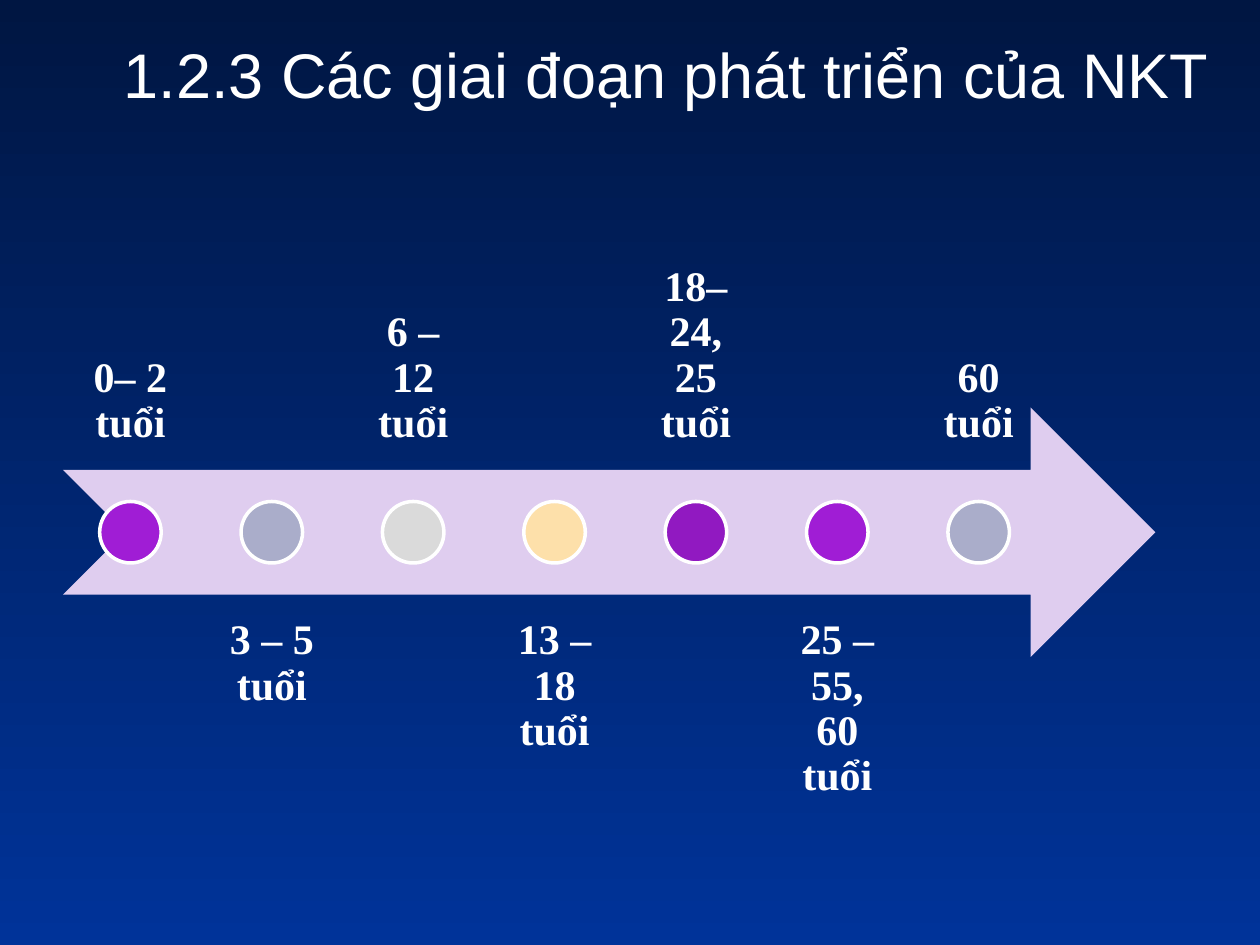
"""Build a timeline slide of seven age stages along a notched arrow."""
from pptx import Presentation
from pptx.dml.color import RGBColor
from pptx.enum.shapes import MSO_SHAPE
from pptx.enum.text import MSO_ANCHOR, PP_ALIGN
from pptx.util import Cm, Pt

ARROW = MSO_SHAPE.NOTCHED_RIGHT_ARROW
OVAL = MSO_SHAPE.OVAL
TOP, MIDDLE, BOTTOM = MSO_ANCHOR.TOP, MSO_ANCHOR.MIDDLE, MSO_ANCHOR.BOTTOM
CENTER = PP_ALIGN.CENTER

STAGES = [
    ("0– 2 tuổi", "A01DD5"),
    ("3 – 5 tuổi", "AAADCA"),
    ("6 – 12 tuổi", "DADADA"),
    ("13 – 18 tuổi", "FDE0AA"),
    ("18– 24, 25 tuổi", "9119C1"),
    ("25 – 55, 60 tuổi", "A01DD5"),
    ("60 tuổi", "AAADCA"),
]
LEFT, UPPER, LOWER = 1.27, 4.45, 11.99
WIDTH, HEIGHT, STEP = 2.72, 5.03, 2.85
DOT = 1.24
AXIS = 10.73


def color(code):
    return RGBColor.from_string(code)


class Deck:
    white = "FFFFFF"
    head_font = "Arial"
    body_font = "Times New Roman"

    def __init__(self, slide):
        self.slide = slide
        self.group = slide.shapes.add_group_shape()

    def backdrop(self, start, end):
        fill = self.slide.background.fill
        fill.gradient()
        fill.gradient_angle = 270
        for stop, code in zip(fill.gradient_stops, (start, end)):
            stop.color.rgb = color(code)

    def put_text(self, frame, text, font, size, bold, anchor):
        frame.word_wrap = True
        frame.vertical_anchor = anchor
        para = frame.paragraphs[0]
        para.alignment = CENTER
        run = para.add_run()
        run.text = text
        run.font.name = font
        run.font.size = Pt(size)
        run.font.bold = bold
        run.font.color.rgb = color(self.white)
        return para

    def title(self, text, x, y, w, h):
        box = self.slide.shapes.title
        box.left, box.top, box.width, box.height = Cm(x), Cm(y), Cm(w), Cm(h)
        self.put_text(box.text_frame, text, self.head_font, 36, False, MIDDLE)

    def shape(self, kind, x, y, w, h, fill, line=None):
        item = self.group.shapes.add_shape(kind, Cm(x), Cm(y), Cm(w), Cm(h))
        item.shadow.inherit = False
        item.fill.solid()
        item.fill.fore_color.rgb = color(fill)
        if line:
            item.line.color.rgb = color(line)
            item.line.width = Pt(2)
        else:
            item.line.fill.background()

    def label(self, text, x, y, w, h, anchor):
        box = self.group.shapes.add_textbox(Cm(x), Cm(y), Cm(w), Cm(h))
        frame = box.text_frame
        frame.margin_left = frame.margin_right = Cm(0.48)
        frame.margin_top = frame.margin_bottom = Cm(0.48)
        para = self.put_text(frame, text, self.body_font, 24, True, anchor)
        para.line_spacing = 0.9


def main():
    prs = Presentation()
    prs.slide_width, prs.slide_height = Cm(25.4), Cm(19.05)
    deck = Deck(prs.slides.add_slide(prs.slide_layouts[5]))
    deck.backdrop("001642", "003399")
    deck.title("1.2.3 Các giai đoạn phát triển của NKT", 1.47, 0, 23.93, 2.97)
    deck.shape(ARROW, LEFT, AXIS - HEIGHT / 2, 22.02, HEIGHT, "DFCDEF")
    for i, (text, fill) in enumerate(STAGES):
        x = LEFT + i * STEP
        y, anchor = (LOWER, TOP) if i % 2 else (UPPER, BOTTOM)
        deck.label(text, x, y, WIDTH, HEIGHT, anchor)
        deck.shape(OVAL, x + (WIDTH - DOT) / 2, AXIS - DOT / 2, DOT, DOT,
                   fill, deck.white)
    prs.save("out.pptx")


if __name__ == "__main__":
    main()
